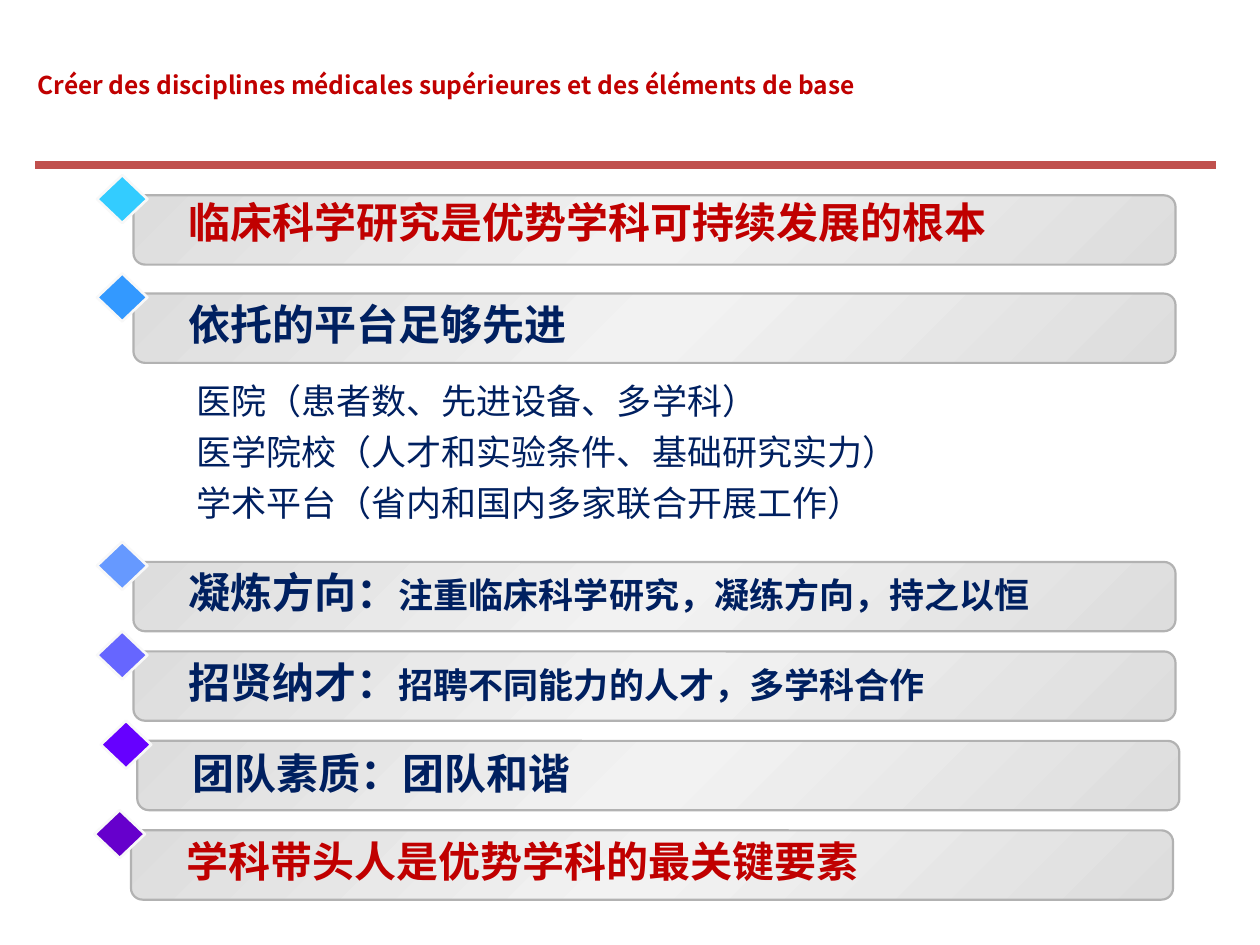
from copy import deepcopy

from lxml import etree
from pptx import Presentation
from pptx import util as u
from pptx.dml.color import RGBColor
from pptx.enum import shapes, text
from pptx.oxml.ns import qn

COLORS = {
    "red": "C00000", "navy": "002060", "rule": "C0504D", "white": "FFFFFF",
    "edge": "B2B2B2", "dark": "DDDDDD", "light": "F2F2F2", "rim": "F8F8F8",
    "cyan": "33CCFF", "azure": "3399FF", "sky": "6699FF",
    "periwinkle": "6666FF", "violet": "6600FF", "purple": "6600CC",
}
CJK = "Noto Sans CJK SC"


def rgb(name):
    return RGBColor.from_string(COLORS[name])


def box(*lengths):
    return [u.Inches(v) for v in lengths]


class SlideBuilder:
    def __init__(self, s):
        self.s = s

    def style(self, p, color, size=None, font=CJK, bold=True):
        f = p.font
        f.name, f.bold = font, bold
        f.color.rgb = rgb(color)
        if size:
            f.size = u.Pt(size)
        ea = etree.SubElement(p._p.pPr.find(qn("a:defRPr")), qn("a:ea"))
        ea.set("typeface", CJK)

    def rule(self, x1, x2, y, color, width):
        c = self.s.shapes.add_connector(
            shapes.MSO_CONNECTOR.STRAIGHT, *box(x1, y, x2, y))
        c.line.color.rgb = rgb(color)
        c.line.width = u.Pt(width)
        etree.SubElement(c._element.spPr, qn("a:effectLst"))

    def shape(self, parent, kind, at, line=None, width=1):
        sp = parent.shapes.add_shape(kind, *box(*at))
        sp.shadow.inherit = False
        if line:
            sp.line.color.rgb = rgb(line)
            sp.line.width = u.Pt(width)
        else:
            sp.line.fill.background()
        return sp

    def label(self, parent, at, runs, color, spacing=None):
        """One paragraph; runs is a list of (text, size)."""
        tf = parent.shapes.add_textbox(*box(*at)).text_frame
        tf.word_wrap = True
        p = tf.paragraphs[0]
        if spacing:
            p.line_spacing = spacing
        same = len({size for _, size in runs}) == 1
        for words, size in runs:
            r = p.add_run()
            r.text = words
            if not same:
                r.font.size = u.Pt(size)
        self.style(p, color, runs[0][1] if same else None)

    def bar(self, parent, x, y):
        sp = self.shape(parent, shapes.MSO_SHAPE.ROUNDED_RECTANGLE,
                        (x, y, 8.27, 0.55), "edge", 1.25)
        sp.fill.gradient()
        sp.fill.gradient_angle = 315
        stops = sp._element.spPr.find(qn("a:gradFill")).find(qn("a:gsLst"))
        stops.insert(1, deepcopy(stops[0]))
        for stop, pos, color in zip(sp.fill.gradient_stops, (0, 0.5, 1),
                                    ("dark", "light", "dark")):
            stop.position = pos
            stop.color.rgb = rgb(color)

    def item(self, x, y, marker, color, runs, text_dy=-0.01, text_h=0.51, spacing=None):
        """Gradient bar with a diamond at its corner and a heading."""
        g = self.s.shapes.add_group_shape()
        self.bar(g, x, y)
        sp = self.shape(g, shapes.MSO_SHAPE.DIAMOND,
                        (x - 0.28, y - 0.17, 0.38, 0.4), "rim", 1.5)
        sp.rotation = 90
        sp.fill.solid()
        sp.fill.fore_color.rgb = rgb(marker)
        self.label(g, (x + 0.34, y + text_dy, 7.96, text_h), runs, color, spacing)

    def panel(self, at, lines, color, size, gap):
        sp = self.shape(self.s, shapes.MSO_SHAPE.RECTANGLE, at)
        sp.fill.solid()
        sp.fill.fore_color.rgb = rgb("white")
        tf = sp.text_frame
        tf.word_wrap = True
        tf.vertical_anchor = text.MSO_ANCHOR.TOP
        for i, words in enumerate(lines):
            p = tf.paragraphs[0] if i == 0 else tf.add_paragraph()
            p.text = words
            p.alignment = text.PP_ALIGN.LEFT
            if i:
                p.space_before = u.Pt(gap)
            self.style(p, color, size, "Arial", False)


def main():
    prs = Presentation()
    prs.slide_width, prs.slide_height = box(10, 7.5)
    b = SlideBuilder(prs.slides.add_slide(prs.slide_layouts[6]))

    # Title and rule
    b.rule(0.28, 9.65, 1.31, "rule", 4.5)
    b.label(b.s, (0.2, 0.51, 7.17, 0.61),
            [("Créer des disciplines médicales supérieures et des éléments de base", 14)],
            "red")

    # Foundations
    b.item(1.06, 1.55, "cyan", "red", [("临床科学研究是优势学科可持续发展的根本", 24)],
           0.07, 0.38, 0.7)
    b.item(1.06, 2.33, "azure", "navy", [("依托的平台足够先进", 24)])

    # Direction, talent, team and leader, evenly spaced
    rows = [
        (1.06, "sky", "navy", [("凝炼方向：", 24), ("注重临床科学研究，凝练方向，持之以恒", 20)], {}),
        (1.06, "periwinkle", "navy", [("招贤纳才：", 24), ("招聘不同能力的人才，多学科合作", 20)], {}),
        (1.09, "violet", "navy", [("团队素质：团队和谐", 24)],
         {"text_dy": 0.08, "text_h": 0.42, "spacing": 0.8}),
        (1.04, "purple", "red", [("学科带头人是优势学科的最关键要素", 24)], {}),
    ]
    for i, (x, marker, color, runs, options) in enumerate(rows):
        b.item(x, 4.46 + 0.71 * i, marker, color, runs, **options)

    # Platforms listed under the second heading
    b.panel((1.46, 2.96, 8.03, 1.45),
            ["医院（患者数、先进设备、多学科）",
             "医学院校（人才和实验条件、基础研究实力）",
             "学术平台（省内和国内多家联合开展工作）"],
            "navy", 20, 5.3)

    prs.save("out.pptx")


if __name__ == "__main__":
    main()
